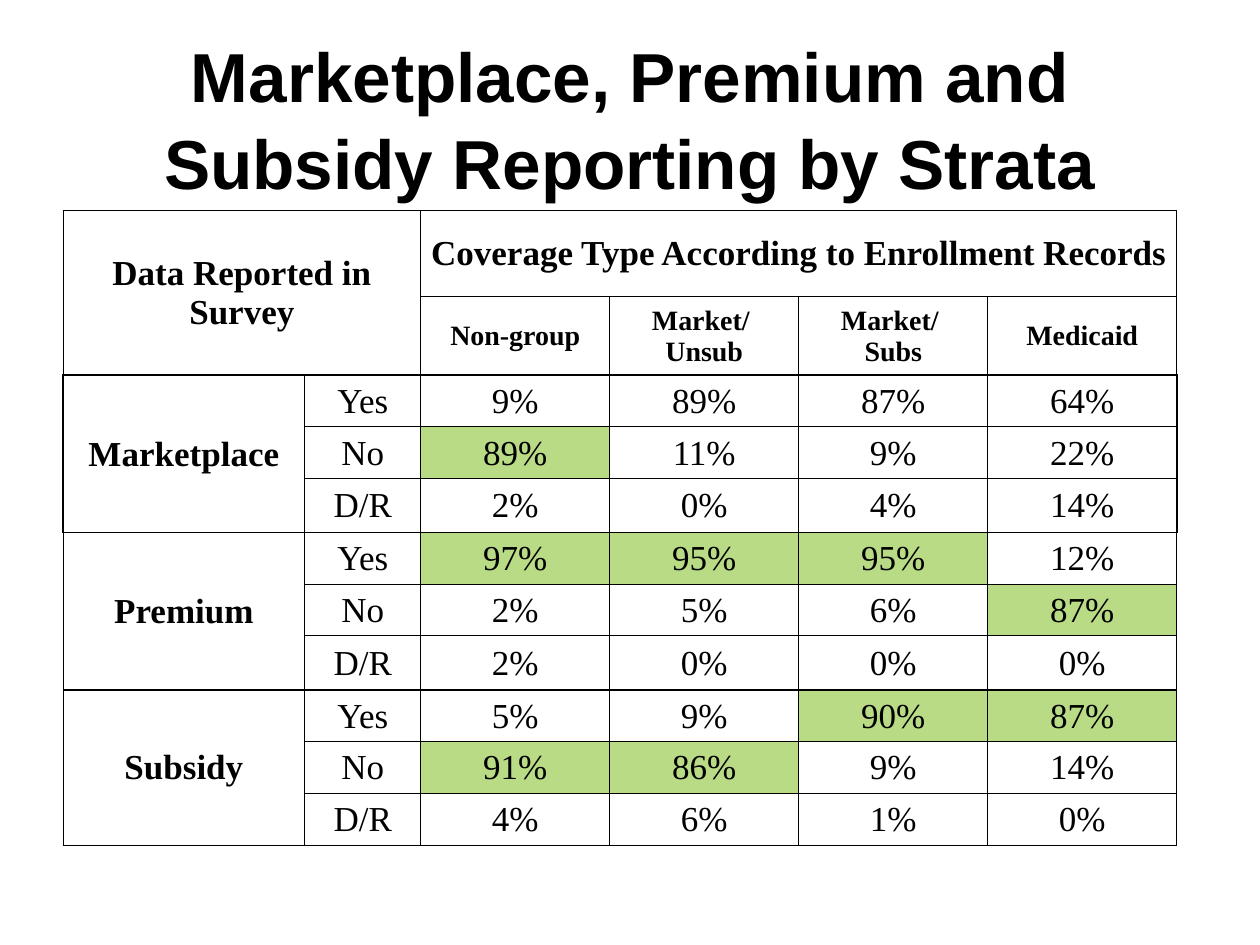
from lxml import etree
from pptx import Presentation
from pptx.dml.color import RGBColor
from pptx.enum.text import MSO_ANCHOR, PP_ALIGN
from pptx.oxml.ns import qn
from pptx.util import Inches, Pt

BLACK = RGBColor(0x00, 0x00, 0x00)
WHITE = RGBColor(0xFF, 0xFF, 0xFF)
GREEN = RGBColor(0xBA, 0xDB, 0x85)

COLUMN_WIDTHS = [1.92, 0.92] + [1.5] * 4
ROW_HEIGHTS = [0.68, 0.59] + [0.41, 0.41, 0.43] * 2 + [0.41] * 3
HEADER_ROWS = 2
LABEL_COLUMNS = 2

COVERAGE_TYPES = ["Non-group", "Market/ \nUnsub", "Market/ \nSubs", "Medicaid"]
ANSWERS = ["Yes", "No", "D/R"]
PERCENTAGES = {
    "Marketplace": [(9, 89, 87, 64), (89, 11, 9, 22), (2, 0, 4, 14)],
    "Premium": [(97, 95, 95, 12), (2, 5, 6, 87), (2, 0, 0, 0)],
    "Subsidy": [(5, 9, 90, 87), (91, 86, 9, 14), (4, 6, 1, 0)],
}
# The answer expected for each coverage type; the others stay plain.
EXPECTED = {
    "Marketplace": ["No", None, None, None],
    "Premium": ["Yes", "Yes", "Yes", "No"],
    "Subsidy": ["No", "No", "Yes", "Yes"],
}


def format_text(text_frame, font_name, size, bold):
    for paragraph in text_frame.paragraphs:
        paragraph.alignment = PP_ALIGN.CENTER
        for run in paragraph.runs:
            run.font.name = font_name
            run.font.size = Pt(size)
            run.font.bold = bold
            run.font.color.rgb = BLACK


def add_title(slide, text):
    title = slide.shapes.title
    title.left, title.top = Inches(0.5), Inches(0.3)
    title.width, title.height = Inches(9), Inches(1.25)
    text_frame = title.text_frame
    text_frame.text = text
    text_frame.word_wrap = True
    text_frame.vertical_anchor = MSO_ANCHOR.MIDDLE
    text_frame.paragraphs[0].line_spacing = 1.04
    format_text(text_frame, "Arial", 39.6, True)


def set_border(cell, side, width):
    line = etree.SubElement(cell._tc.get_or_add_tcPr(), qn(f"a:ln{side}"), w=str(Pt(width)))
    fill = etree.SubElement(line, qn("a:solidFill"))
    etree.SubElement(fill, qn("a:srgbClr"), val=str(BLACK))


def format_cell(cell, row, column):
    """Set margins, borders and an empty fill; rules around answer groups are thicker."""
    cell.margin_left = cell.margin_right = cell.margin_top = Inches(0.01)
    cell.margin_bottom = 0
    cell.vertical_anchor = MSO_ANCHOR.MIDDLE
    first_group = HEADER_ROWS <= row < HEADER_ROWS + len(ANSWERS)
    last_row, last_column = len(ROW_HEIGHTS) - 1, len(COLUMN_WIDTHS) - 1
    thick_sides = {
        "L": first_group and column == 0,
        "R": first_group and column == last_column,
        "T": row in (2, 5, 8),
        "B": row in (1, 4, 7) and row != last_row,
    }
    for side, thick in thick_sides.items():
        set_border(cell, side, 1 if thick else 0.5)
    cell.fill.background()


def fill_cell(cell, text, size=20, bold=False, color=None):
    cell.text_frame.text = text
    format_text(cell.text_frame, "Times New Roman", size, bold)
    if color is not None:
        cell.fill.solid()
        cell.fill.fore_color.rgb = color


def add_empty_table(slide):
    frame = slide.shapes.add_table(
        len(ROW_HEIGHTS), len(COLUMN_WIDTHS), Inches(0.5), Inches(1.67),
        Inches(sum(COLUMN_WIDTHS)), Inches(sum(ROW_HEIGHTS)))
    table = frame.table
    table.first_row = table.horz_banding = False
    for column, width in zip(table.columns, COLUMN_WIDTHS):
        column.width = Inches(width)
    for row, height in zip(table.rows, ROW_HEIGHTS):
        row.height = Inches(height)
    for row in range(len(ROW_HEIGHTS)):
        for column in range(len(COLUMN_WIDTHS)):
            format_cell(table.cell(row, column), row, column)
    return table


def fill_header(table):
    table.cell(0, 0).merge(table.cell(1, 1))
    table.cell(0, 2).merge(table.cell(0, 5))
    fill_cell(table.cell(0, 0), "Data Reported in Survey", bold=True)
    fill_cell(table.cell(0, 2), "Coverage Type According to Enrollment Records", bold=True)
    for column, name in enumerate(COVERAGE_TYPES, LABEL_COLUMNS):
        fill_cell(table.cell(1, column), name, size=16, bold=True)


def fill_group(table, first_row, name):
    table.cell(first_row, 0).merge(table.cell(first_row + len(ANSWERS) - 1, 0))
    fill_cell(table.cell(first_row, 0), name, bold=True)
    for row, (answer, values) in enumerate(zip(ANSWERS, PERCENTAGES[name]), first_row):
        fill_cell(table.cell(row, 1), answer)
        for column, (value, expected) in enumerate(zip(values, EXPECTED[name]), LABEL_COLUMNS):
            color = GREEN if answer == expected else WHITE
            fill_cell(table.cell(row, column), f"{value}%", color=color)


def main():
    presentation = Presentation()
    presentation.slide_width, presentation.slide_height = Inches(10), Inches(7.5)
    slide = presentation.slides.add_slide(presentation.slide_layouts[5])
    add_title(slide, "Marketplace, Premium and Subsidy Reporting by Strata")
    table = add_empty_table(slide)
    fill_header(table)
    for index, name in enumerate(PERCENTAGES):
        fill_group(table, HEADER_ROWS + index * len(ANSWERS), name)
    presentation.save("out.pptx")


if __name__ == "__main__":
    main()
